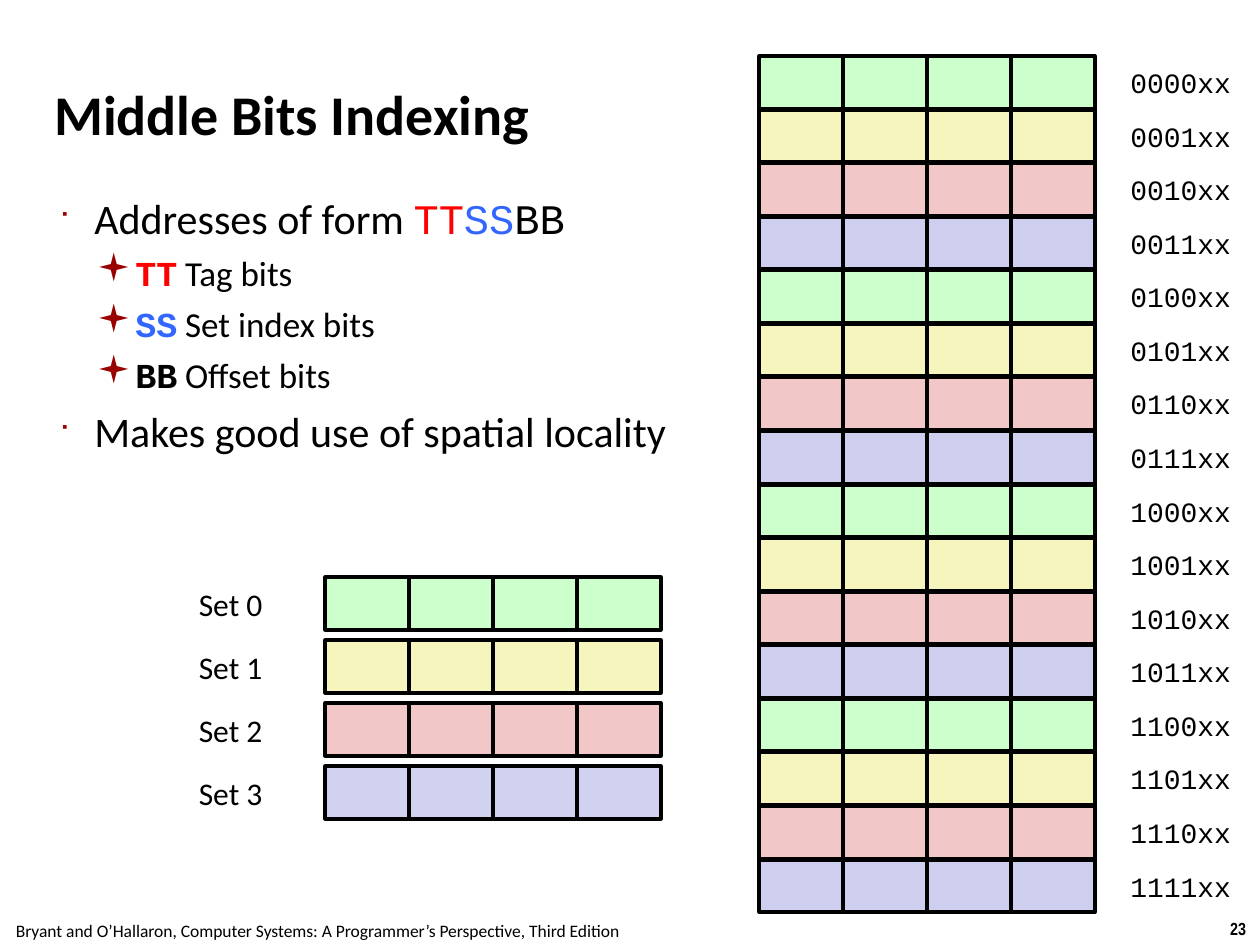
from lxml.etree import SubElement
from pptx import Presentation
from pptx.dml.color import RGBColor
from pptx.enum.shapes import MSO_SHAPE
from pptx.enum.text import MSO_ANCHOR, MSO_AUTO_SIZE, PP_ALIGN
from pptx.oxml.ns import qn
from pptx.util import Cm, Pt

BLACK = RGBColor(0x00, 0x00, 0x00)
RED = RGBColor(0xFF, 0x00, 0x00)
BLUE = RGBColor(0x33, 0x66, 0xFF)
GREEN_FILL = RGBColor(0xCC, 0xFF, 0xCC)
YELLOW_FILL = RGBColor(0xF6, 0xF5, 0xBD)
PINK_FILL = RGBColor(0xF1, 0xC7, 0xC7)
SET_LILAC = RGBColor(0xD1, 0xD1, 0xF0)
MEMORY_LILAC = RGBColor(0xCE, 0xCE, 0xEF)
BULLET_COLOR = "990000"

SANS, MONO, NARROW = "Calibri", "Courier New", "Arial Narrow"
CELL_W, CELL_H, CELLS = 1.69, 1.06, 4
INSET = 0.1
LEVELS = [
    {"bullet": "■", "percent": 60, "margin": 0.71, "indent": -0.71, "size": 24, "before": 6},
    {"bullet": "▪", "percent": 110, "margin": 1.42, "indent": -0.66, "size": 20, "before": 5},
]
BODY = [
    (0, [("Addresses of form ", SANS, BLACK, False), ("TT", MONO, RED, False),
         ("SS", MONO, BLUE, False), ("BB", MONO, BLACK, False)]),
    (1, [("TT", MONO, RED, True), ("\tTag bits", SANS, BLACK, False)]),
    (1, [("SS", MONO, BLUE, True), ("\tSet index bits", SANS, BLACK, False)]),
    (1, [("BB", MONO, BLACK, True), ("\tOffset bits", SANS, BLACK, False)]),
    (0, [("Makes good use of spatial locality", SANS, BLACK, False)]),
]


def set_attrs(obj, **values):
    """Set each named value on an object."""
    for name, value in values.items():
        setattr(obj, name, value)


def place(sp, x, y, w, h):
    """Move and size a shape, in centimetres."""
    set_attrs(sp, left=Cm(x), top=Cm(y), width=Cm(w), height=Cm(h))


def add_run(p, text, font, size, color=BLACK, bold=False):
    """Append a formatted run to a paragraph."""
    r = p.add_run()
    r.text = text
    set_attrs(r.font, name=font, size=Pt(size), bold=bold)
    r.font.color.rgb = color


def format_frame(tf, anchor):
    """Give a placeholder frame its insets and anchor."""
    set_attrs(tf, margin_left=Cm(INSET), margin_right=Cm(INSET), margin_top=Cm(INSET),
              margin_bottom=Cm(INSET), vertical_anchor=anchor, word_wrap=True,
              auto_size=MSO_AUTO_SIZE.NONE)


def add_label(s, text, x, y, w, h, font, size, bold=False, wrap=True):
    """Add a centred one-line text box."""
    tf = s.shapes.add_textbox(Cm(x), Cm(y), Cm(w), Cm(h)).text_frame
    set_attrs(tf, word_wrap=wrap, vertical_anchor=MSO_ANCHOR.MIDDLE)
    p = tf.paragraphs[0]
    p.alignment = PP_ALIGN.CENTER
    add_run(p, text, font, size, bold=bold)


def fill_title(s, x, y, w, h):
    """Place and write the slide title."""
    sp = s.shapes.title
    place(sp, x, y, w, h)
    format_frame(sp.text_frame, MSO_ANCHOR.MIDDLE)
    p = sp.text_frame.paragraphs[0]
    p.alignment = PP_ALIGN.LEFT
    add_run(p, "Middle Bits Indexing", SANS, 32, bold=True)


def format_bullet(p, level):
    """Set the indent, spacing and bullet of a list paragraph."""
    style = LEVELS[level]
    set_attrs(p, level=level, space_before=Pt(style["before"]), alignment=PP_ALIGN.LEFT)
    pPr = p._p.get_or_add_pPr()
    pPr.set("marL", str(Cm(style["margin"])))
    pPr.set("indent", str(Cm(style["indent"])))
    color = SubElement(pPr, qn("a:buClr"))
    SubElement(color, qn("a:srgbClr"), val=BULLET_COLOR)
    SubElement(pPr, qn("a:buSzPct"), val=str(style["percent"] * 1000))
    SubElement(pPr, qn("a:buFont"), typeface="Wingdings")
    SubElement(pPr, qn("a:buChar"), char=style["bullet"])


def fill_body(s, x, y, w, h):
    """Place and write the bulleted list."""
    sp = s.placeholders[1]
    place(sp, x, y, w, h)
    tf = sp.text_frame
    format_frame(tf, MSO_ANCHOR.TOP)
    for i, (level, runs) in enumerate(BODY):
        p = tf.add_paragraph() if i else tf.paragraphs[0]
        format_bullet(p, level)
        for text, font, color, bold in runs:
            add_run(p, text, font, LEVELS[level]["size"], color, bold)


def add_block(s, x, y, fill):
    """Add one grouped row of byte cells."""
    group = s.shapes.add_group_shape()
    for i in range(CELLS):
        sp = group.shapes.add_shape(MSO_SHAPE.RECTANGLE, Cm(x + i * CELL_W), Cm(y),
                                    Cm(CELL_W), Cm(CELL_H))
        sp.shadow.inherit = False
        sp.fill.solid()
        sp.fill.fore_color.rgb = fill
        sp.line.color.rgb = BLACK
        sp.line.width = Pt(2.25)


def add_cache(s, x, y):
    """Add the four cache sets with their names on the left."""
    for i, fill in enumerate([GREEN_FILL, YELLOW_FILL, PINK_FILL, SET_LILAC]):
        top = y + i * 1.27
        add_block(s, x + 3.18, top, fill)
        add_label(s, f"Set {i}", x, top, 2.54, CELL_H, SANS, 18)


def add_memory(s, x, y):
    """Add the sixteen memory blocks with their addresses on the right."""
    fills = [GREEN_FILL, YELLOW_FILL, PINK_FILL, MEMORY_LILAC]
    for i in range(16):
        top = y + i * 1.08
        add_block(s, x, top, fills[i % len(fills)])
        add_label(s, f"{i:04b}xx", x + 7.12, top, 2.74, CELL_H, MONO, 16)


def add_footer(s, x, y):
    """Add the book credit and the slide number."""
    add_label(s, "Bryant and O’Hallaron, Computer Systems: A Programmer’s Perspective, "
              "Third Edition", x, y, 12.9, 0.69, SANS, 10, wrap=False)
    add_label(s, "23", x + 24.58, y - 0.05, 0.86, 0.69, NARROW, 10, bold=True, wrap=False)


def main():
    """Build and save the slide."""
    prs = Presentation()
    set_attrs(prs, slide_width=Cm(25.4), slide_height=Cm(19.05))
    s = prs.slides.add_slide(prs.slide_layouts[1])
    add_footer(s, -0.05, 18.42)
    fill_title(s, 0.99, 1.22, 13.82, 2.11)
    fill_body(s, 1.09, 3.78, 16.26, 3)
    add_cache(s, 3.38, 11.64)
    add_memory(s, 15.31, 1.13)
    prs.save("out.pptx")


if __name__ == "__main__":
    main()
